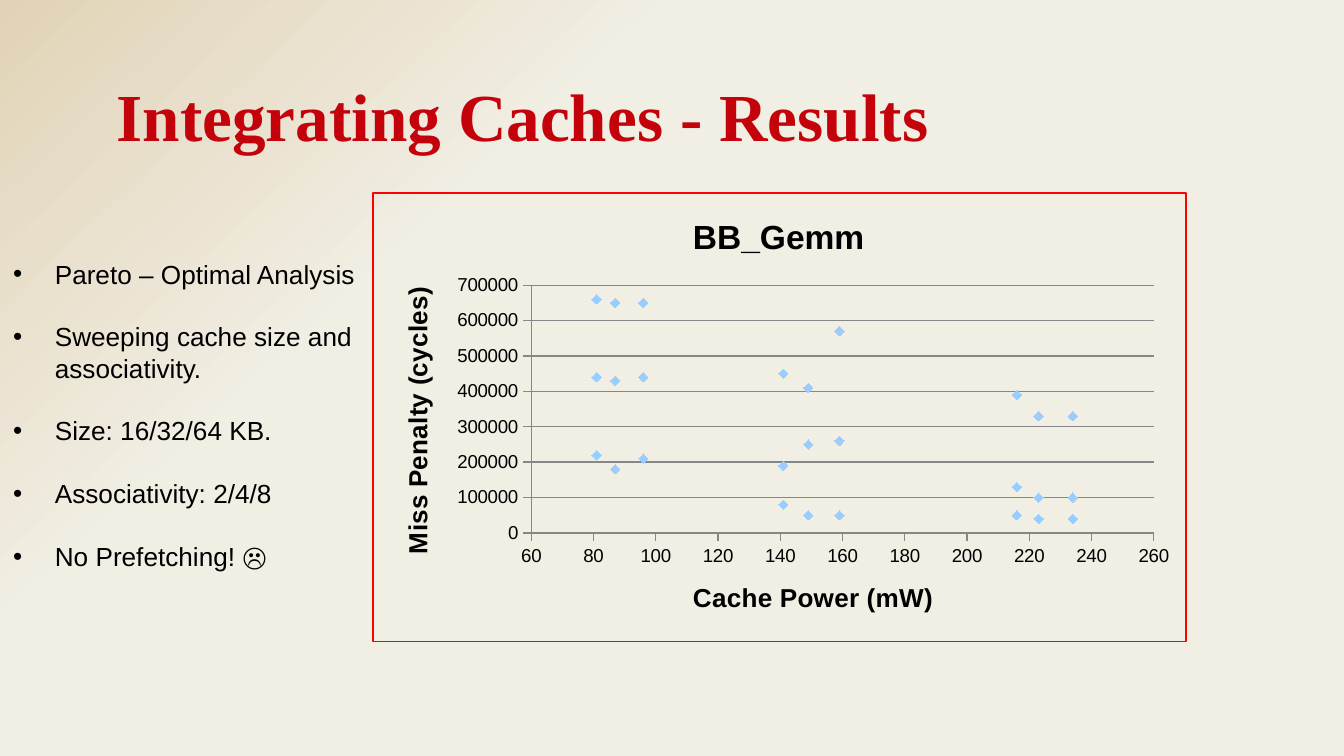
from lxml.etree import SubElement
from pptx import Presentation
from pptx.chart.data import XyChartData
from pptx.dml.color import RGBColor
from pptx.enum.chart import XL_CHART_TYPE, XL_MARKER_STYLE, XL_TICK_MARK
from pptx.enum.text import MSO_ANCHOR
from pptx.oxml import parse_xml
from pptx.oxml.ns import nsdecls, qn
from pptx.util import Inches, Pt

BLACK = RGBColor(0x00, 0x00, 0x00)
TITLE_RED = RGBColor(0xC3, 0x02, 0x0B)
BORDER_RED = RGBColor(0xFF, 0x00, 0x00)
SAND = RGBColor(0xE1, 0xD3, 0xB6)
CREAM = RGBColor(0xF1, 0xEE, 0xE4)
GRID_GRAY = RGBColor(0x87, 0x87, 0x87)
MARKER_BLUE = RGBColor(0x99, 0xCC, 0xFF)

CHART_WIDTH, CHART_HEIGHT = 6.06, 3.35

BULLETS = [
    "Pareto – Optimal Analysis",
    "Sweeping cache size and associativity.",
    "Size: 16/32/64 KB.",
    "Associativity: 2/4/8",
    "No Prefetching! ☹",
]

# Cache power in mW, and miss penalty in thousands of cycles for each sweep
POWERS = [81, 87, 96, 141, 149, 159, 216, 223, 234]
HIGH_SWEEP = [660, 650, 650, 450, 410, 570, 390, 330, 330]
SWEEPS = [
    [440, 430, 440, 190, 250, 260, 130, 100, 100],
    [220, 180, 210, 80, 50, 50, 50, 40, 40],
    HIGH_SWEEP,
    HIGH_SWEEP,
]


def format_font(font, size, name="Arial", color=BLACK, bold=False):
    font.size = Pt(size)
    font.name = name
    font.bold = bold
    font.color.rgb = color


def place(element, after, left, top, size=None):
    """Give a chart part a fixed place, in inches from the chart's corner."""
    for layout in element.findall(qn("c:layout")):
        element.remove(layout)
    values = {"xMode": "edge", "yMode": "edge",
              "x": left / CHART_WIDTH, "y": top / CHART_HEIGHT}
    if size:
        width, height = size
        values = {"layoutTarget": "inner", **values,
                  "w": width / CHART_WIDTH, "h": height / CHART_HEIGHT}
    parts = "".join(f'<c:{key} val="{value}"/>' for key, value in values.items())
    layout = parse_xml(
        f'<c:layout {nsdecls("c")}><c:manualLayout>{parts}</c:manualLayout></c:layout>'
    )
    if after is None:
        element.insert(0, layout)
    else:
        element.find(qn(after)).addnext(layout)


class SlideBuilder:
    def __init__(self, presentation):
        self.slide = presentation.slides.add_slide(presentation.slide_layouts[6])

    def background(self):
        fill = self.slide.background.fill
        fill.gradient()
        fill.gradient_angle = 360 - 47
        for stop, color, position in zip(fill.gradient_stops, (SAND, CREAM), (0, 0.32)):
            stop.color.rgb = color
            stop.position = position

    def text_frame(self, left, top, width, height):
        box = self.slide.shapes.add_textbox(
            Inches(left), Inches(top), Inches(width), Inches(height))
        frame = box.text_frame
        frame.word_wrap = True
        frame.vertical_anchor = MSO_ANCHOR.TOP
        return frame

    def title(self, text, *place_on_slide):
        frame = self.text_frame(*place_on_slide)
        frame.margin_top = Inches(0.1)
        run = frame.paragraphs[0].add_run()
        run.text = text
        format_font(run.font, 36, "Times New Roman", TITLE_RED, bold=True)

    def bullets(self, texts, *place_on_slide):
        frame = self.text_frame(*place_on_slide)
        for index, text in enumerate(texts):
            paragraph = frame.add_paragraph() if index else frame.paragraphs[0]
            properties = paragraph._p.get_or_add_pPr()
            properties.set("marL", str(Inches(0.31)))
            properties.set("indent", str(-Inches(0.31)))
            if index:
                paragraph.space_before = Pt(16.8)
            SubElement(properties, qn("a:buFont"), typeface="Arial")
            SubElement(properties, qn("a:buChar"), char="•")
            run = paragraph.add_run()
            run.text = text
            format_font(run.font, 14)

    def chart_title(self, title, text, size, left, top):
        frame = title.text_frame
        run = frame.paragraphs[0].add_run()
        run.text = text
        format_font(run.font, size, bold=True)
        place(title._element, "c:tx", left, top)
        return frame

    def axis(self, axis, low, high, step):
        axis.minimum_scale, axis.maximum_scale, axis.major_unit = low, high, step
        axis.major_tick_mark = XL_TICK_MARK.OUTSIDE
        axis.minor_tick_mark = XL_TICK_MARK.NONE
        axis.format.line.color.rgb = GRID_GRAY
        axis.tick_labels.number_format = "General"
        axis.tick_labels.number_format_is_linked = False
        format_font(axis.tick_labels.font, 10)

    def scatter(self, left, top):
        data = XyChartData()
        points = data.add_series("Series 1")
        for sweep in SWEEPS:
            for power, penalty in zip(POWERS, sweep):
                points.add_data_point(power, penalty * 1000)
        chart = self.slide.shapes.add_chart(
            XL_CHART_TYPE.XY_SCATTER, Inches(left), Inches(top),
            Inches(CHART_WIDTH), Inches(CHART_HEIGHT), data).chart
        format_font(chart.font, 10)
        chart.has_legend = False

        # Markers
        plot = chart.plots[0]
        plot.vary_by_categories = False
        series = plot.series[0]
        series.smooth = False
        series.format.line.fill.background()
        series.marker.style = XL_MARKER_STYLE.DIAMOND
        series.marker.size = 5
        series.marker.format.fill.solid()
        series.marker.format.fill.fore_color.rgb = MARKER_BLUE
        series.marker.format.line.fill.background()

        # Axes and titles
        self.axis(chart.category_axis, 60, 260, 20)
        self.axis(chart.value_axis, 0, 700000, 100000)
        chart.category_axis.has_major_gridlines = False
        chart.value_axis.has_major_gridlines = True
        chart.value_axis.major_gridlines.format.line.color.rgb = GRID_GRAY
        chart.has_title = True
        self.chart_title(chart.chart_title, "BB_Gemm", 18, 2.34, 0.12)
        self.chart_title(chart.category_axis.axis_title, "Cache Power (mW)", 14, 2.35, 2.86)
        frame = self.chart_title(
            chart.value_axis.axis_title, "Miss Penalty (cycles)", 14, 0.17, 0.67)
        body = frame._txBody.find(qn("a:bodyPr"))
        body.set("rot", "-5400000")
        body.set("vert", "horz")

        # Plot area and frame
        chart_space = chart._chartSpace
        plot_area = chart_space.find(qn("c:chart")).find(qn("c:plotArea"))
        place(plot_area, None, 1.18, 0.69, (4.64, 1.85))
        border = parse_xml(
            f'<c:spPr {nsdecls("c", "a")}><a:noFill/><a:ln w="{Pt(0.75)}"><a:solidFill>'
            f'<a:srgbClr val="{BORDER_RED}"/></a:solidFill></a:ln></c:spPr>')
        chart_space.find(qn("c:chart")).addnext(border)


def main():
    presentation = Presentation()
    presentation.slide_width = Inches(10)
    presentation.slide_height = presentation.slide_width * 9 // 16
    builder = SlideBuilder(presentation)
    builder.background()
    builder.title("Integrating Caches - Results", 0.77, 0.45, 7.81, 0.71)
    builder.scatter(2.77, 1.43)
    builder.bullets(BULLETS, 0, 1.87, 2.77, 3.4)
    presentation.save("out.pptx")


if __name__ == "__main__":
    main()
